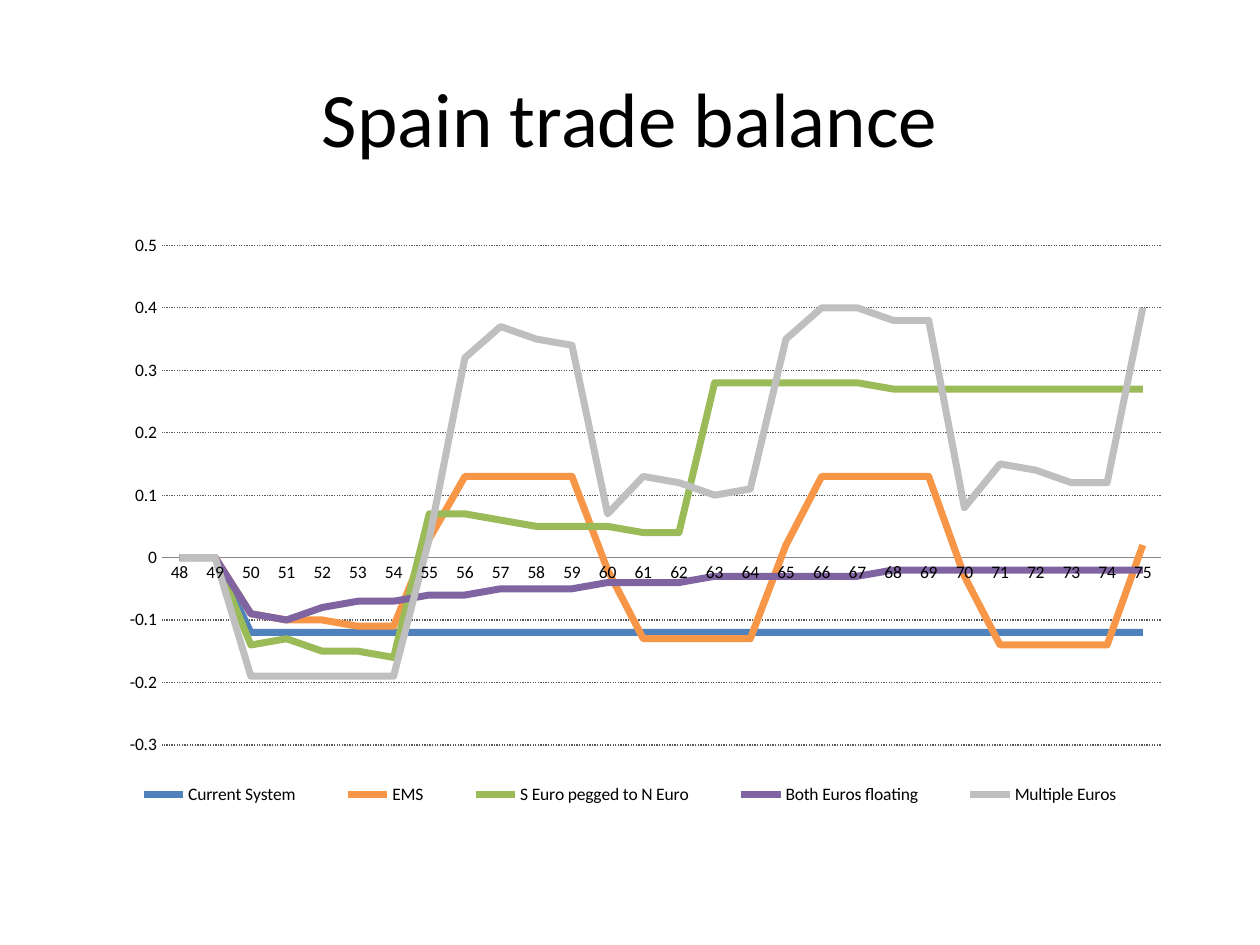
"""Build the slide charting Spain's trade balance under five currency systems."""
from dataclasses import dataclass

from lxml.etree import SubElement
from pptx import Presentation
from pptx.chart.data import CategoryChartData
from pptx.dml.color import RGBColor
from pptx.enum.chart import XL_CHART_TYPE, XL_LEGEND_POSITION, XL_TICK_MARK
from pptx.enum.dml import MSO_LINE
from pptx.enum.text import MSO_ANCHOR, PP_ALIGN
from pptx.oxml.ns import qn
from pptx.util import Inches, Pt


@dataclass(frozen=True)
class Theme:
    """Colours, font and sizes of the slide."""

    font: str = "Calibri"
    ink: str = "000000"
    axis: str = "868686"
    grid: str = "595959"
    title_size: float = 44
    chart_size: float = 10
    series_width: float = 4
    hairline: float = 0.75


YEARS = range(48, 76)
BALANCES = {
    "Current System": ("4F81BD", [0] * 2 + [-0.12] * 26),
    "EMS": ("F79646", [
        0, 0, -0.09, -0.1, -0.1, -0.11, -0.11, 0.03, 0.13, 0.13, 0.13, 0.13, -0.02, -0.13,
        -0.13, -0.13, -0.13, 0.02, 0.13, 0.13, 0.13, 0.13, -0.03, -0.14, -0.14, -0.14, -0.14, 0.02]),
    "S Euro pegged to N Euro": ("9BBB59", [
        0, 0, -0.14, -0.13, -0.15, -0.15, -0.16, 0.07, 0.07, 0.06, 0.05, 0.05, 0.05, 0.04,
        0.04, 0.28, 0.28, 0.28, 0.28, 0.28] + [0.27] * 8),
    "Both Euros floating": ("8064A2", [
        0, 0, -0.09, -0.1, -0.08, -0.07, -0.07, -0.06, -0.06, -0.05, -0.05, -0.05, -0.04, -0.04,
        -0.04, -0.03, -0.03, -0.03, -0.03, -0.03] + [-0.02] * 8),
    "Multiple Euros": ("BFBFBF", [
        0, 0, -0.19, -0.19, -0.19, -0.19, -0.19, 0.03, 0.32, 0.37, 0.35, 0.34, 0.07, 0.13,
        0.12, 0.1, 0.11, 0.35, 0.4, 0.4, 0.38, 0.38, 0.08, 0.15, 0.14, 0.12, 0.12, 0.4]),
}


def style_font(font, name, size, color):
    """Give a font its face, size and colour."""
    font.name, font.size = name, Pt(size)
    font.color.rgb = RGBColor.from_string(color)


def write(frame, text, *, name, size, color, align, anchor):
    """Put one formatted paragraph into a text frame."""
    frame.text = text
    frame.word_wrap = True
    frame.vertical_anchor = anchor
    paragraph = frame.paragraphs[0]
    paragraph.alignment = align
    style_font(paragraph.runs[0].font, name, size, color)


def style_line(line, color, width):
    """Give a line its colour and width."""
    line.color.rgb = RGBColor.from_string(color)
    line.width = Pt(width)


def place_part(part, index, target, **shares):
    """Lay out a chart part by its shares of the chart's size."""
    for old in part.findall(qn("c:layout")):
        part.remove(old)
    layout = SubElement(part, qn("c:layout"))
    part.insert(index, layout)
    manual = SubElement(layout, qn("c:manualLayout"))
    settings = {"xMode": "edge", "yMode": "edge", **shares}
    if target:
        settings = {"layoutTarget": target, **settings}
    for tag, value in settings.items():
        SubElement(manual, qn(f"c:{tag}")).set("val", str(value))


class SlideBuilder:
    """Holds the theme and the current slide."""

    def __init__(self, deck, theme):
        """Add a title-only slide to the deck."""
        self.theme = theme
        self.size = deck.slide_width, deck.slide_height
        self.slide = deck.slides.add_slide(deck.slide_layouts[5])

    def box(self, left, top, width, height):
        """Turn shares of the slide into lengths."""
        across, down = self.size
        return int(left * across), int(top * down), int(width * across), int(height * down)

    def title(self, text, *shares):
        """Fill and place the title."""
        title = self.slide.shapes.title
        title.left, title.top, title.width, title.height = self.box(*shares)
        write(title.text_frame, text, name=self.theme.font, size=self.theme.title_size,
              color=self.theme.ink, align=PP_ALIGN.CENTER, anchor=MSO_ANCHOR.MIDDLE)

    def line_chart(self, categories, series, *shares):
        """Add a line chart with a legend below."""
        theme = self.theme
        data = CategoryChartData()
        data.categories = [str(category) for category in categories]
        for name, (_, values) in series.items():
            data.add_series(name, values)
        chart = self.slide.shapes.add_chart(XL_CHART_TYPE.LINE, *self.box(*shares), data).chart
        chart.has_title = False
        style_font(chart.font, theme.font, theme.chart_size, theme.ink)
        for curve, (color, _) in zip(chart.plots[0].series, series.values()):
            curve.smooth = False
            style_line(curve.format.line, color, theme.series_width)
        self.axes(chart)
        chart.has_legend = True
        chart.legend.position = XL_LEGEND_POSITION.BOTTOM
        chart.legend.include_in_layout = False
        chart_part = chart._chartSpace.chart
        place_part(chart_part.plotArea, 0, "inner", x=0.087, y=0.04, w=0.881, h=0.801)
        place_part(chart_part.find(qn("c:legend")), 1, None, x=0.03, y=0.88, w=0.94, h=0.08)

    def axes(self, chart):
        """Format both axes and the gridlines."""
        theme = self.theme
        for axis in (chart.category_axis, chart.value_axis):
            axis.major_tick_mark = axis.minor_tick_mark = XL_TICK_MARK.NONE
        style_line(chart.category_axis.format.line, theme.axis, theme.hairline)
        balance = chart.value_axis
        balance.minimum_scale, balance.maximum_scale, balance.major_unit = -0.3, 0.5, 0.1
        balance.tick_labels.number_format = "[>0.05]0.0;[<-0.05]-0.0;0"
        balance.tick_labels.number_format_is_linked = False
        balance.format.line.fill.background()
        balance.has_major_gridlines = True
        grid = balance.major_gridlines.format.line
        style_line(grid, theme.grid, theme.hairline)
        grid.dash_style = MSO_LINE.ROUND_DOT


def main():
    """Build and save the deck."""
    deck = Presentation()
    deck.slide_width, deck.slide_height = Inches(10), Inches(7.5)
    builder = SlideBuilder(deck, Theme())
    builder.title("Spain trade balance", 0.05, 0.04, 0.9, 1 / 6)
    builder.line_chart(YEARS, BALANCES, 0.05, 7 / 30, 0.9, 0.66)
    deck.save("out.pptx")


if __name__ == "__main__":
    main()
